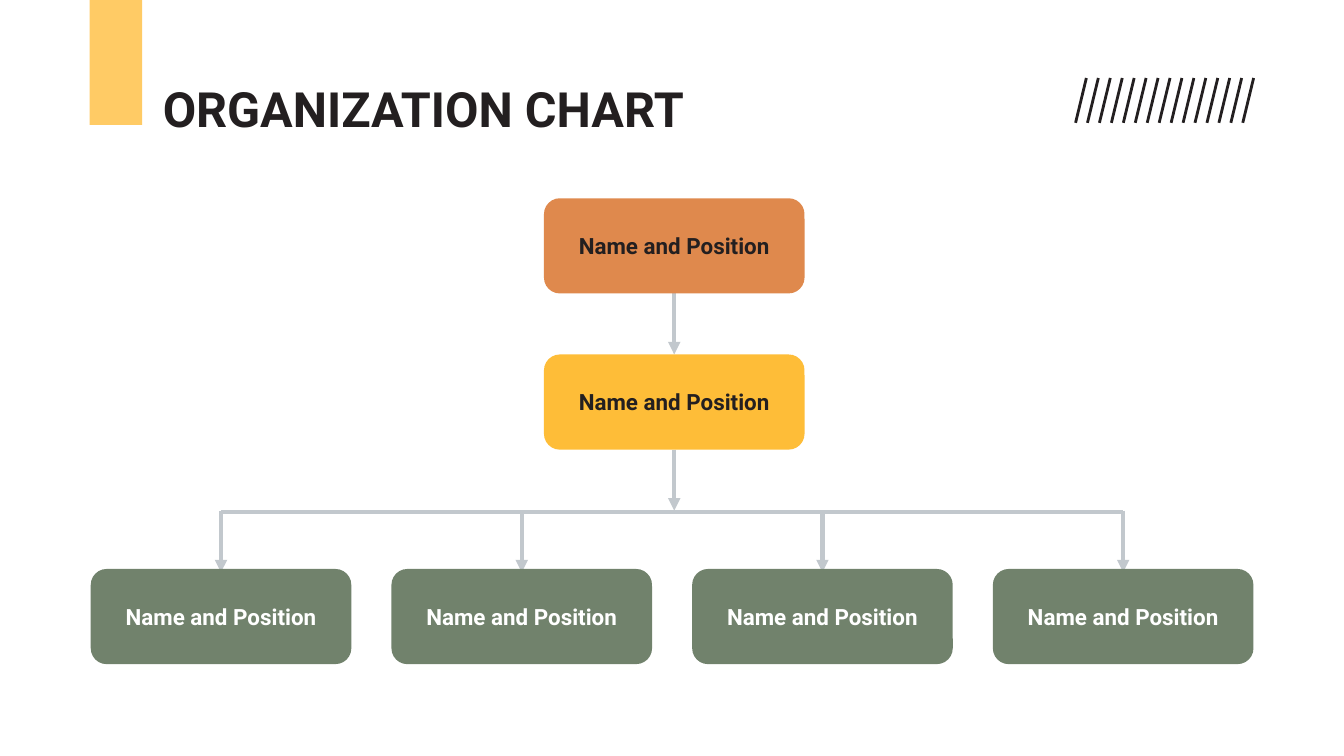
from dataclasses import dataclass

from lxml.etree import SubElement
from pptx import Presentation
from pptx.dml.color import RGBColor
from pptx.enum.shapes import MSO_CONNECTOR, MSO_SHAPE
from pptx.enum.text import MSO_ANCHOR, MSO_AUTO_SIZE, PP_ALIGN
from pptx.oxml.ns import qn
from pptx.util import Pt


@dataclass(frozen=True)
class Theme:
    font: str = "Roboto"
    ink: str = "231F20"
    paper: str = "FFFFFF"
    accent: str = "FFCB65"
    leader: str = "DF894D"
    deputy: str = "FEBD38"
    member: str = "71826C"
    branch: str = "C2C8CD"
    title_size: float = 26
    label_size: float = 12
    hatch_width: float = 1.5
    branch_width: float = 2.25


class OrgSlide:
    def __init__(self, slide, theme):
        self.slide = slide
        self.theme = theme
        slide.background.fill.solid()
        slide.background.fill.fore_color.rgb = RGBColor.from_string(theme.paper)

    def label(self, shape, text, size, color, align, anchor):
        frame = shape.text_frame
        frame.text = text
        frame.margin_left = frame.margin_right = 0
        frame.margin_top = frame.margin_bottom = 0
        frame.auto_size = MSO_AUTO_SIZE.NONE
        frame.vertical_anchor = anchor
        paragraph = frame.paragraphs[0]
        paragraph.alignment = align
        font = paragraph.runs[0].font
        font.name = self.theme.font
        font.size = Pt(size)
        font.bold = True
        font.color.rgb = RGBColor.from_string(color)

    def title(self, text, left, top, width, height):
        heading = self.slide.shapes.title
        heading.left, heading.top = Pt(left), Pt(top)
        heading.width, heading.height = Pt(width), Pt(height)
        self.label(heading, text, self.theme.title_size, self.theme.ink,
                   PP_ALIGN.LEFT, MSO_ANCHOR.TOP)
        heading.text_frame.word_wrap = False

    def block(self, kind, left, top, width, height, fill):
        block = self.slide.shapes.add_shape(
            kind, Pt(left), Pt(top), Pt(width), Pt(height))
        block.shadow.inherit = False
        block.fill.solid()
        block.fill.fore_color.rgb = RGBColor.from_string(fill)
        block.line.fill.background()
        return block

    def card(self, text, center, top, width, height, fill, color):
        card = self.block(MSO_SHAPE.ROUNDED_RECTANGLE, center - width / 2, top,
                          width, height, fill)
        card.adjustments[0] = 0.167
        self.label(card, text, self.theme.label_size, color,
                   PP_ALIGN.CENTER, MSO_ANCHOR.MIDDLE)

    def line(self, start, end, color, width, arrow=False):
        line = self.slide.shapes.add_connector(
            MSO_CONNECTOR.STRAIGHT, *map(Pt, start), *map(Pt, end))
        line.line.color.rgb = RGBColor.from_string(color)
        line.line.width = Pt(width)
        properties = line.element.spPr
        if arrow:
            SubElement(properties.find(qn("a:ln")), qn("a:tailEnd"), type="triangle")
        SubElement(properties, qn("a:effectLst"))

    def hatching(self, left, top, count, step, lean, height):
        for index in range(count):
            foot = left + index * step
            self.line((foot + lean, top), (foot, top + height),
                      self.theme.ink, self.theme.hatch_width)

    def branch(self, start, end, arrow=True):
        self.line(start, end, self.theme.branch, self.theme.branch_width, arrow)


def main():
    deck = Presentation()
    deck.slide_width, deck.slide_height = Pt(720), Pt(405)
    theme = Theme()
    page = OrgSlide(deck.slides.add_slide(deck.slide_layouts[5]), theme)

    page.block(MSO_SHAPE.RECTANGLE, 48, 0, 28.2, 67, theme.accent)
    page.title("ORGANIZATION CHART", 87.2, 42.5, 314.6, 31.7)
    page.hatching(left=576.2, top=41.8, count=15, step=6.4, lean=5.8, height=24)

    role = "Name and Position"
    card_width, card_height = 139.6, 51
    leader_top, deputy_top, member_top = 106.2, 189.9, 304.8
    trunk, bus = 361.2, 274.2
    member_centers = [118.4 + 161.1 * index for index in range(4)]

    page.branch((trunk, leader_top + card_height), (trunk, deputy_top))
    page.branch((trunk, deputy_top + card_height), (trunk, bus - 0.6))
    page.branch((member_centers[0], bus), (member_centers[-1], bus), arrow=False)
    for center in member_centers:
        page.branch((center, bus - 0.6), (center, member_top + 1.8))

    cards = [(trunk, leader_top, theme.leader, theme.ink),
             (trunk, deputy_top, theme.deputy, theme.ink)]
    cards += [(center, member_top, theme.member, theme.paper)
              for center in member_centers]
    for center, top, fill, color in cards:
        page.card(role, center, top, card_width, card_height, fill, color)

    deck.save("out.pptx")


if __name__ == "__main__":
    main()
